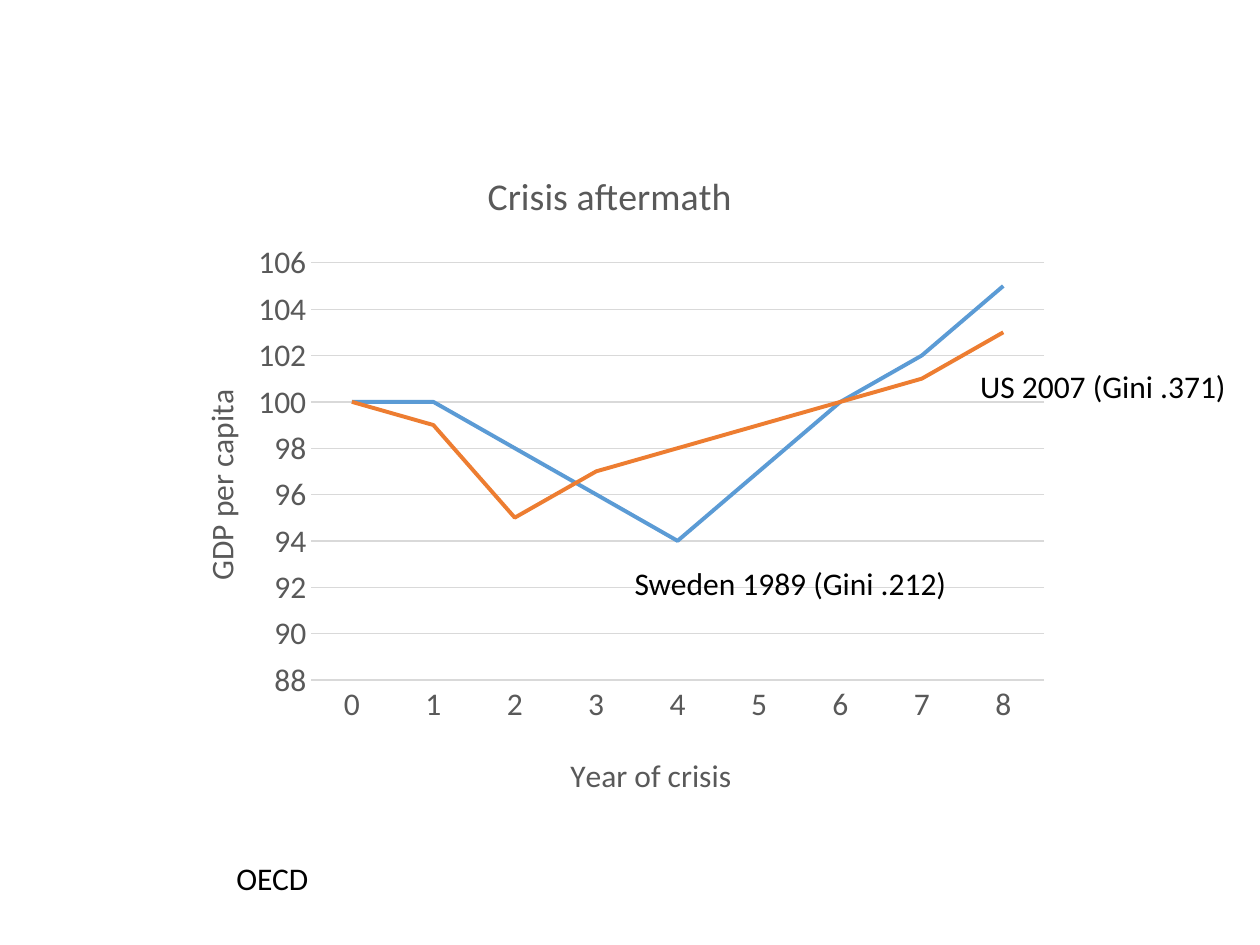
from dataclasses import dataclass

from lxml.etree import SubElement
from pptx import Presentation
from pptx.chart.data import CategoryChartData
from pptx.dml.color import RGBColor
from pptx.enum.chart import XL_CHART_TYPE, XL_TICK_MARK
from pptx.enum.text import MSO_AUTO_SIZE
from pptx.oxml.ns import qn
from pptx.util import Pt


@dataclass(frozen=True)
class Theme:
    font: str = "Calibri"
    body: float = 18
    title: float = 21.6
    ink: str = "000000"
    muted: str = "595959"
    grid: str = "D9D9D9"
    series: tuple = ("5B9BD5", "ED7D31")
    hairline: float = 0.75
    stroke: float = 2.25


def set_all(obj, formats):
    for name, value in formats.items():
        setattr(obj, name, value)


def place(parent, **fractions):
    """Give a chart part a fixed place, as fractions of the chart."""
    layout = parent.find(qn("c:layout"))
    if layout is None:
        layout = SubElement(parent, qn("c:layout"))
        parent.insert(0, layout)
    manual = SubElement(layout, qn("c:manualLayout"))
    if "w" in fractions:
        SubElement(manual, qn("c:layoutTarget")).set("val", "inner")
    for side in "xy":
        SubElement(manual, qn(f"c:{side}Mode")).set("val", "edge")
    for side, value in fractions.items():
        SubElement(manual, qn(f"c:{side}")).set("val", str(value))


class SlideBuilder:
    def __init__(self, s, theme):
        self.s, self.theme = s, theme

    def style_font(self, font, size, color):
        set_all(font, {"name": self.theme.font, "size": Pt(size), "bold": False})
        font.color.rgb = RGBColor.from_string(color)

    def style_line(self, line, width, color):
        line.width = Pt(width)
        line.color.rgb = RGBColor.from_string(color)

    def label(self, text, x, y, w, h=29):
        tf = self.s.shapes.add_textbox(Pt(x), Pt(y), Pt(w), Pt(h)).text_frame
        set_all(tf, {"word_wrap": False, "auto_size": MSO_AUTO_SIZE.SHAPE_TO_FIT_TEXT})
        r = tf.paragraphs[0].add_run()
        r.text = text
        self.style_font(r.font, self.theme.body, self.theme.ink)

    def heading(self, owner, text, size):
        owner.has_title = True
        title = owner.chart_title if hasattr(owner, "chart_title") else owner.axis_title
        p = title.text_frame.paragraphs[0]
        r = p.add_run()
        r.text = text
        self.style_font(r.font, size, self.theme.muted)
        return title

    def axis(self, axis, text, formats, x, y):
        t = self.theme
        set_all(axis, {"major_tick_mark": XL_TICK_MARK.NONE,
                       "minor_tick_mark": XL_TICK_MARK.NONE, **formats})
        self.style_font(axis.tick_labels.font, t.body, t.muted)
        place(self.heading(axis, text, t.body)._element, x=x, y=y)

    def line_chart(self, title, categories, series, x, y, w, h):
        t = self.theme
        data = CategoryChartData()
        data.categories = categories
        for name, values in series.items():
            data.add_series(name, values)
        chart = self.s.shapes.add_chart(
            XL_CHART_TYPE.LINE, Pt(x), Pt(y), Pt(w), Pt(h), data).chart
        chart.has_legend = False
        self.style_font(chart.font, t.body, t.ink)
        self.heading(chart, title, t.title)

        # Series lines
        plot = chart.plots[0]
        plot.vary_by_categories = False
        for line, color in zip(plot.series, t.series):
            line.smooth = False
            self.style_line(line.format.line, t.stroke, color)

        # Axes and gridlines
        cat, val = chart.category_axis, chart.value_axis
        self.axis(cat, "Year of crisis", {"has_major_gridlines": False}, 0.45, 0.9)
        self.style_line(cat.format.line, t.hairline, t.grid)
        self.axis(val, "GDP per capita",
                  {"minimum_scale": 88, "maximum_scale": 106, "major_unit": 2,
                   "has_major_gridlines": True}, 0.04, 0.36)
        val.format.line.fill.background()
        set_all(val.tick_labels, {"number_format": "General",
                                  "number_format_is_linked": False})
        self.style_line(val.major_gridlines.format.line, t.hairline, t.grid)
        place(plot._element.getparent(), x=0.17, y=0.18, w=0.81, h=0.62)


def main():
    prs = Presentation()
    set_all(prs, {"slide_width": Pt(720), "slide_height": Pt(540)})
    builder = SlideBuilder(prs.slides.add_slide(prs.slide_layouts[6]), Theme())

    # Growth after each crisis
    builder.line_chart(
        "Crisis aftermath", [str(year) for year in range(9)],
        {"Series 1": (100, 100, 98, 96, 94, 97, 100, 102, 105),
         "Series 2": (100, 99, 95, 97, 98, 99, 100, 101, 103)},
        90, 81, 517, 384.5)

    # Line labels and data source
    builder.label("US 2007 (Gini .371)", 553, 206, 156)
    builder.label("Sweden 1989 (Gini .212)", 355.5, 318.5, 195)
    builder.label("OECD", 128, 487.5, 56)

    prs.save("out.pptx")


if __name__ == "__main__":
    main()
